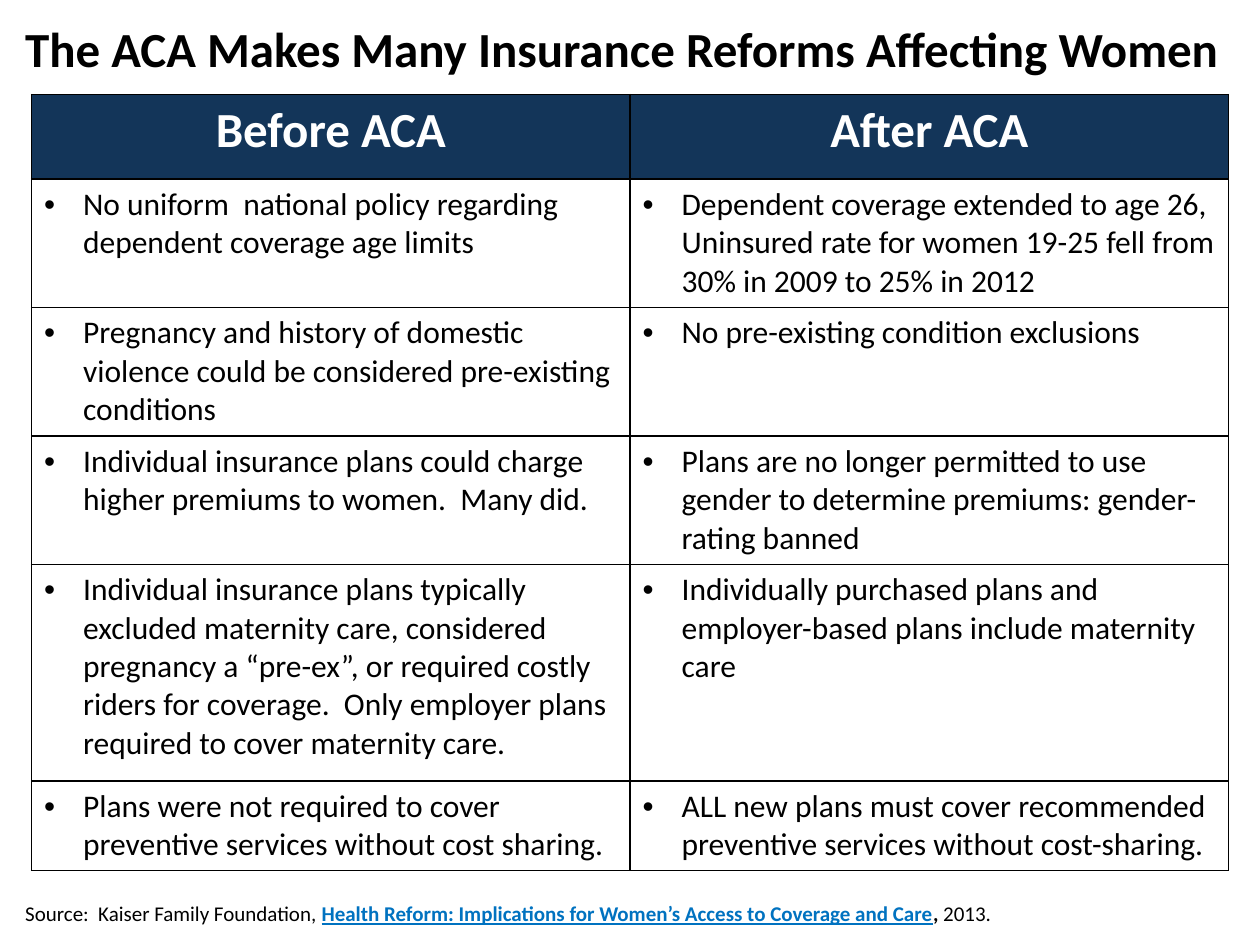
from dataclasses import dataclass

from lxml import etree
from pptx import Presentation
from pptx.dml.color import RGBColor
from pptx.enum.text import MSO_ANCHOR, MSO_AUTO_SIZE, PP_ALIGN
from pptx.oxml.ns import qn
from pptx.util import Inches, Pt

TOP, BOTTOM = MSO_ANCHOR.TOP, MSO_ANCHOR.BOTTOM
LEFT, CENTER = PP_ALIGN.LEFT, PP_ALIGN.CENTER
NO_AUTOFIT = MSO_AUTO_SIZE.NONE

BLACK = RGBColor(0x00, 0x00, 0x00)
WHITE = RGBColor(0xFF, 0xFF, 0xFF)
NAVY = RGBColor(0x13, 0x35, 0x59)
LINK_BLUE = RGBColor(0x00, 0x72, 0xC0)
FONT = "Calibri"
INDENT = Inches(0.31)


@dataclass
class Span:
    text: str
    size: int
    color: RGBColor = BLACK
    bold: bool = False
    underline: bool = False


@dataclass
class Reform:
    before: str
    after: str
    height: float


REFORMS = [
    Reform(
        "No uniform  national policy regarding dependent coverage age limits",
        "Dependent coverage extended to age 26, Uninsured rate for women 19-25 fell from 30% in 2009 to 25% in 2012",
        1.02,
    ),
    Reform(
        "Pregnancy and history of domestic violence could be considered pre-existing conditions",
        "No pre-existing condition exclusions",
        1.02,
    ),
    Reform(
        "Individual insurance plans could charge higher premiums to women.  Many did.",
        "Plans are no longer permitted to use gender to determine premiums: gender-rating banned",
        1.02,
    ),
    Reform(
        "Individual insurance plans typically excluded maternity care, considered pregnancy a “pre-ex”, "
        "or required costly riders for coverage.  Only employer plans required to cover maternity care.",
        "Individually purchased plans and employer-based plans include maternity care",
        1.72,
    ),
    Reform(
        "Plans were not required to cover preventive services without cost sharing.",
        "ALL new plans must cover recommended preventive services without cost-sharing.",
        0.71,
    ),
]

SOURCE = [
    Span("Source:  Kaiser Family Foundation, ", 12),
    Span("Health Reform: Implications for Women’s Access to Coverage and Care", 12, LINK_BLUE, True, True),
    Span(", ", 12, bold=True),
    Span("2013.", 12),
]


def add_spans(para, spans: list[Span]) -> None:
    for span in spans:
        run = para.add_run()
        run.text = span.text
        run.font.name = FONT
        run.font.size = Pt(span.size)
        run.font.bold = span.bold
        run.font.underline = span.underline
        run.font.color.rgb = span.color


def set_bullet(para, character: str | None) -> None:
    properties = para._p.get_or_add_pPr()
    indent = INDENT if character else 0
    properties.set("marL", str(indent))
    properties.set("indent", str(-indent))
    if character:
        etree.SubElement(properties, qn("a:buFont"), typeface="Arial")
        etree.SubElement(properties, qn("a:buChar"), char=character)
    else:
        etree.SubElement(properties, qn("a:buNone"))


def fill_placeholder(box, bounds: tuple, anchor, spans: list[Span]) -> None:
    box.left, box.top, box.width, box.height = map(Inches, bounds)
    frame = box.text_frame
    frame.word_wrap = True
    frame.auto_size = NO_AUTOFIT
    frame.vertical_anchor = anchor
    para = frame.paragraphs[0]
    para.alignment = LEFT
    para.space_before = Pt(0)
    set_bullet(para, None)
    add_spans(para, spans)


def style_cell(cell, fill: RGBColor) -> None:
    properties = cell._tc.get_or_add_tcPr()
    for side in ("a:lnL", "a:lnR", "a:lnT", "a:lnB"):
        line = etree.SubElement(properties, qn(side), w=str(Pt(1)))
        solid = etree.SubElement(line, qn("a:solidFill"))
        etree.SubElement(solid, qn("a:srgbClr"), val=str(BLACK))
    cell.fill.solid()
    cell.fill.fore_color.rgb = fill


def add_reform_table(page) -> None:
    heights = [0.67] + [reform.height for reform in REFORMS]
    frame = page.shapes.add_table(
        len(heights), 2, Inches(0.25), Inches(0.75), Inches(9.5), Inches(sum(heights))
    )
    table = frame.table
    for row, height in zip(table.rows, heights):
        row.height = Inches(height)
    for column, heading in enumerate(("Before ACA", "After ACA")):
        cell = table.cell(0, column)
        style_cell(cell, NAVY)
        para = cell.text_frame.paragraphs[0]
        para.alignment = CENTER
        add_spans(para, [Span(heading, 28, WHITE, True)])
    for number, reform in enumerate(REFORMS, start=1):
        for column, text in enumerate((reform.before, reform.after)):
            cell = table.cell(number, column)
            style_cell(cell, WHITE)
            para = cell.text_frame.paragraphs[0]
            set_bullet(para, "•")
            add_spans(para, [Span(text, 18)])


def main() -> None:
    deck = Presentation()
    deck.slide_width, deck.slide_height = Inches(10), Inches(7.5)
    page = deck.slides.add_slide(deck.slide_layouts[1])
    title = [Span("The ACA Makes Many Insurance Reforms Affecting Women", 28, bold=True)]
    fill_placeholder(page.shapes.title, (0.1, 0.1, 9.8, 1), TOP, title)
    fill_placeholder(page.placeholders[1], (0.1, 6.8, 9.1, 0.6), BOTTOM, SOURCE)
    add_reform_table(page)
    deck.save("out.pptx")


if __name__ == "__main__":
    main()
